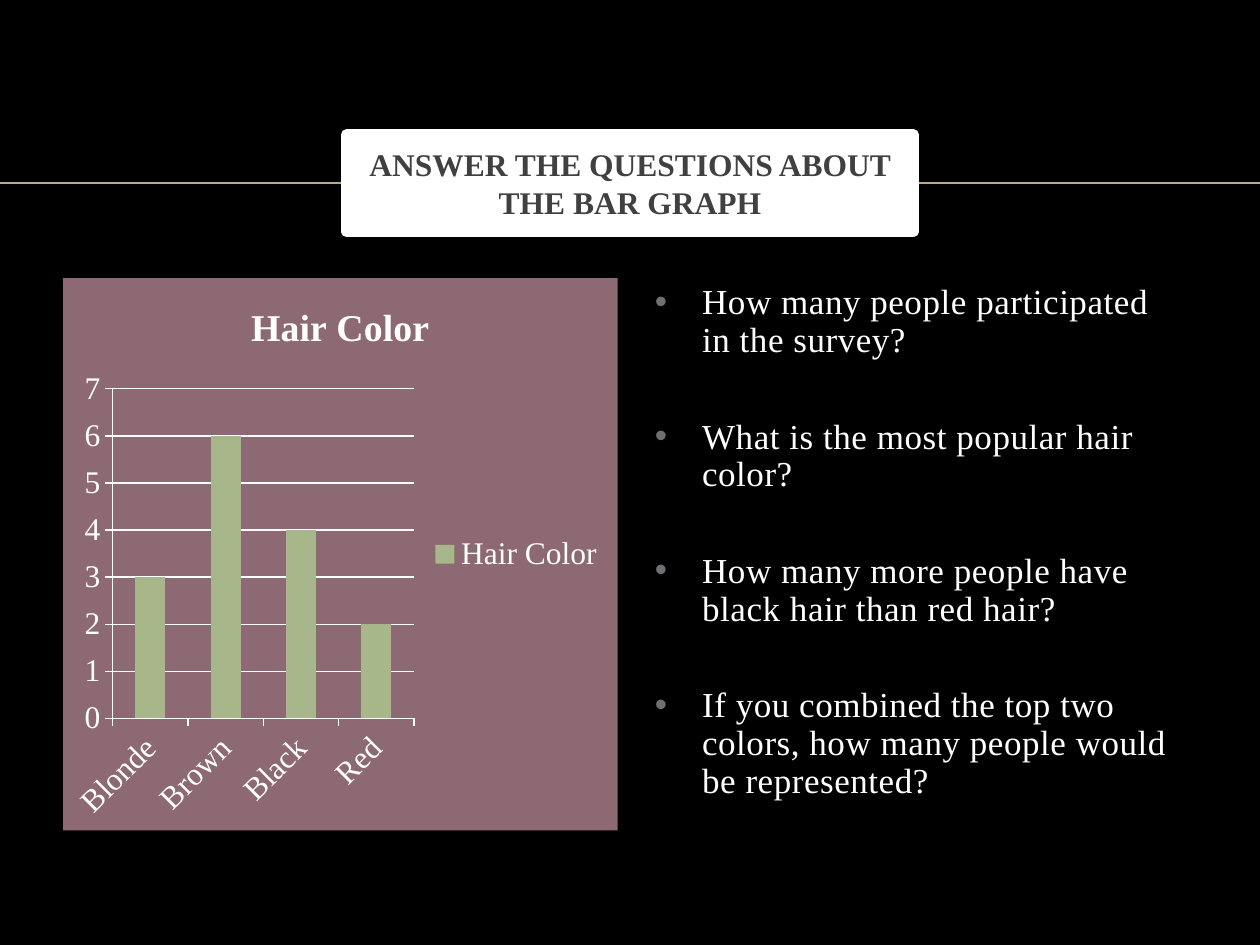
from dataclasses import dataclass

from lxml.etree import SubElement
from pptx import Presentation
from pptx.chart.data import CategoryChartData
from pptx.dml.color import RGBColor
from pptx.enum.chart import XL_CHART_TYPE as ChartType
from pptx.enum.chart import XL_LEGEND_POSITION as LegendPosition
from pptx.enum.chart import XL_TICK_MARK as TickMark
from pptx.enum.shapes import MSO_CONNECTOR as Connector
from pptx.enum.text import MSO_ANCHOR as Anchor
from pptx.enum.text import MSO_AUTO_SIZE as AutoSize
from pptx.enum.text import PP_ALIGN as Align
from pptx.oxml.ns import qn
from pptx.util import Pt

FONT = "Times New Roman"
WHITE, BLACK, GREY, DARK = "FFFFFF", "000000", "6F6F74", "404040"
MAUVE, GREEN, TAN = "8D6974", "A7B789", "BBAA8A"


@dataclass(frozen=True)
class Area:
    left: float
    top: float
    width: float
    height: float

    def lengths(self) -> tuple:
        return Pt(self.left), Pt(self.top), Pt(self.width), Pt(self.height)


@dataclass(frozen=True)
class Bar:
    hair: str
    people: int


SLIDE = Area(0, 0, 720, 540)
TITLE = Area(198, 77, 324, 55.5)
CHART = Area(36, 159, 317, 315.5)
QUESTIONS = Area(367, 159, 317, 315.5)

BARS = [Bar("Blonde", 3), Bar("Brown", 6), Bar("Black", 4), Bar("Red", 2)]
QUESTION_TEXTS = [
    "How many people participated in the survey?",
    "What is the most popular hair color?",
    "How many more people have black hair than red hair?",
    "If you combined the top two colors, how many people would be represented?",
]


def paint(target, color: str) -> None:
    """Give a fill a solid colour."""
    target.solid()
    target.fore_color.rgb = RGBColor.from_string(color)


def style_font(font, size: float, color: str, bold: bool = False) -> None:
    font.name, font.size, font.bold = FONT, Pt(size), bold
    paint(font.fill, color)


def style_line(line, color: str, width: float) -> None:
    paint(line.fill, color)
    line.width = Pt(width)


def place(shape, area: Area) -> None:
    shape.left, shape.top, shape.width, shape.height = area.lengths()


def write(para, text: str, *, size: float, color: str, bold: bool = False,
          align=Align.LEFT, before: float = 0, leading: float = 1,
          tracking: float = 0) -> None:
    para.alignment = align
    para.space_before = Pt(before)
    para.line_spacing = leading
    span = para.add_run()
    span.text = text
    style_font(span.font, size, color, bold)
    span.font._element.set("spc", str(round(tracking * 100)))


def add_bullet(para, color: str, indent: float) -> None:
    properties = para._p.get_or_add_pPr()
    properties.set("marL", str(Pt(indent)))
    properties.set("indent", str(-Pt(indent)))
    bullet_color = SubElement(properties, qn("a:buClr"))
    SubElement(bullet_color, qn("a:srgbClr"), val=color)
    SubElement(properties, qn("a:buFont"), typeface="Arial")
    SubElement(properties, qn("a:buChar"), char="•")


def add_rule(page) -> None:
    middle = Pt(TITLE.top + TITLE.height / 2)
    rule = page.shapes.add_connector(
        Connector.STRAIGHT, 0, middle, Pt(SLIDE.width), middle)
    style_line(rule.line, TAN, 1)
    SubElement(rule.element.spPr, qn("a:effectLst"))


def add_hair_chart(page) -> None:
    data = CategoryChartData()
    data.categories = [bar.hair for bar in BARS]
    data.add_series("Hair Color", [bar.people for bar in BARS])
    frame = page.shapes.add_chart(
        ChartType.COLUMN_CLUSTERED, *CHART.lengths(), data)
    chart = frame.chart
    style_font(chart.font, 18, WHITE)

    chart.has_title = True
    write(chart.chart_title.text_frame.paragraphs[0], "Hair Color",
          size=21.6, color=WHITE, bold=True, align=Align.CENTER)
    chart.chart_title.include_in_layout = False
    chart.has_legend = True
    chart.legend.position = LegendPosition.RIGHT
    chart.legend.include_in_layout = False

    for axis in (chart.category_axis, chart.value_axis):
        axis.major_tick_mark = TickMark.OUTSIDE
        style_line(axis.format.line, WHITE, 0.75)
    chart.value_axis.has_major_gridlines = True
    style_line(chart.value_axis.major_gridlines.format.line, WHITE, 0.75)

    plot = chart.plots[0]
    plot.gap_width = 150
    plot.vary_by_categories = False
    paint(plot.series[0].format.fill, GREEN)

    background = chart.element.makeelement(qn("c:spPr"))
    fill = SubElement(background, qn("a:solidFill"))
    SubElement(fill, qn("a:srgbClr"), val=MAUVE)
    chart.element.find(qn("c:chart")).addnext(background)


def fill_questions(box) -> None:
    place(box, QUESTIONS)
    frame = box.text_frame
    frame.auto_size = AutoSize.NONE
    for number, question in enumerate(QUESTION_TEXTS):
        para = frame.add_paragraph() if number else frame.paragraphs[0]
        write(para, question, size=20, color=WHITE, leading=0.9,
              before=33.5 if number else 6, tracking=0.3)
        add_bullet(para, GREY, 27)


def fill_title(box) -> None:
    place(box, TITLE)
    paint(box.fill, WHITE)
    style_line(box.line, WHITE, 6)
    frame = box.text_frame
    frame.auto_size = AutoSize.NONE
    frame.vertical_anchor = Anchor.MIDDLE
    write(frame.paragraphs[0], "ANSWER THE QUESTIONS ABOUT THE BAR GRAPH",
          size=18, color=DARK, bold=True, align=Align.CENTER, before=4)


def main() -> None:
    deck = Presentation()
    deck.slide_width, deck.slide_height = Pt(SLIDE.width), Pt(SLIDE.height)
    page = deck.slides.add_slide(deck.slide_layouts[1])
    paint(page.background.fill, BLACK)
    title, questions = page.shapes.title, page.placeholders[1]
    add_rule(page)
    add_hair_chart(page)
    fill_questions(questions)
    fill_title(title)
    # The title covers the rule, so it goes to the front.
    title.element.getparent().append(title.element)
    deck.save("out.pptx")


if __name__ == "__main__":
    main()
